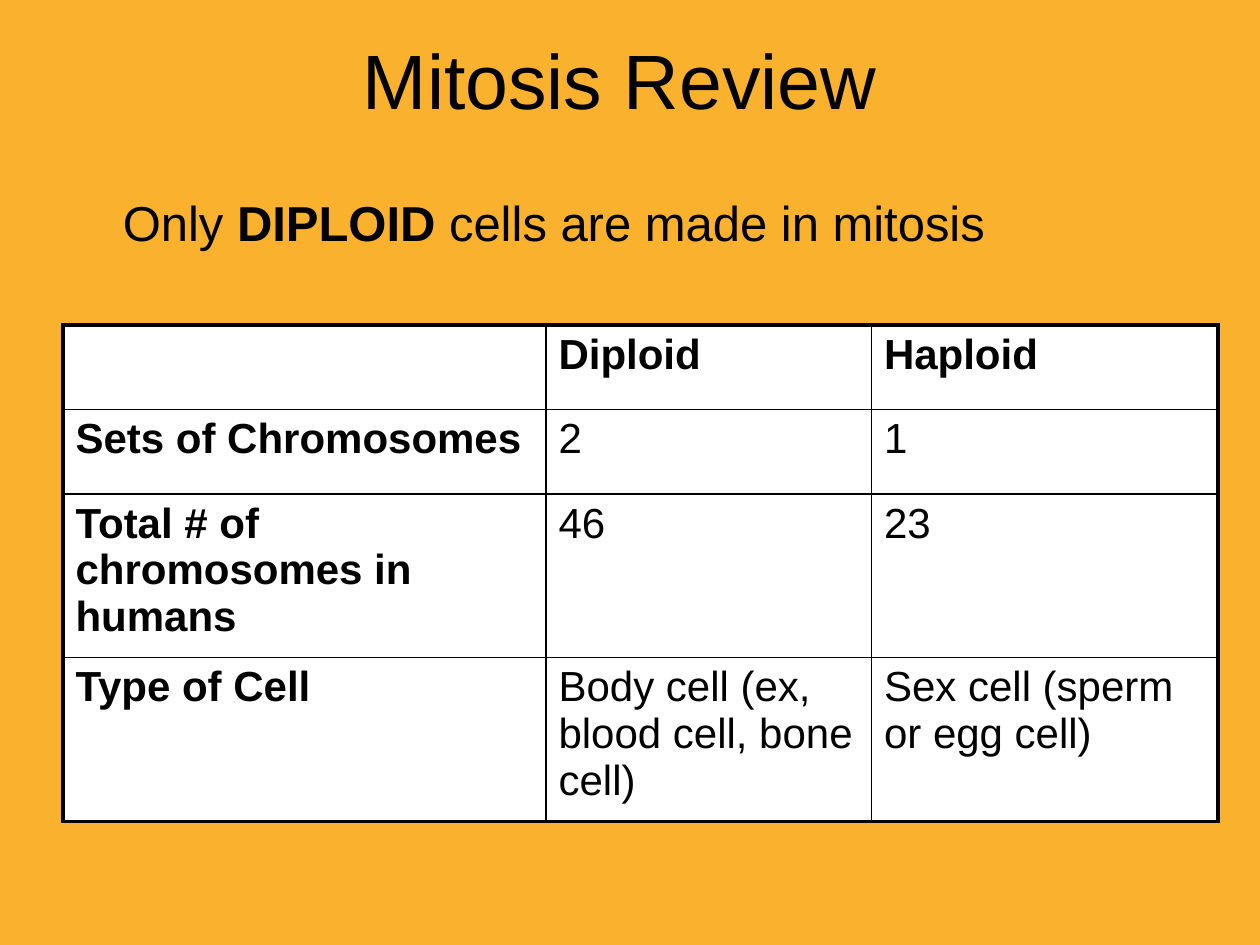
from dataclasses import dataclass

from lxml import etree
from pptx import Presentation
from pptx import util as u
from pptx.dml.color import RGBColor
from pptx.enum import text
from pptx.oxml import ns

INK, PAPER, BACKDROP = "000000", "FFFFFF", "FAB12E"
FONT = "Arial"
UNIT = 1 / 12
COLUMN_UNITS = (46, 31, 33)
ROW_INCHES = (0.67, 0.67, 1.3, 1.3)
OUTER_LINE, INNER_LINE = 2.25, 1


@dataclass(frozen=True)
class Trait:
    label: str
    diploid: str
    haploid: str

    def entries(self) -> tuple[str, str, str]:
        return self.label, self.diploid, self.haploid


TRAITS = (
    Trait("", "Diploid", "Haploid"),
    Trait("Sets of Chromosomes", "2", "1"),
    Trait("Total # of chromosomes in humans", "46", "23"),
    Trait("Type of Cell", "Body cell (ex, blood cell, bone cell)",
          "Sex cell (sperm or egg cell)"),
)


def paint(target, color: str) -> None:
    target.solid()
    target.fore_color.rgb = RGBColor.from_string(color)


def style(run, size: float, bold: bool = False) -> None:
    run.font.name = FONT
    run.font.size = u.Pt(size)
    run.font.bold = bold
    paint(run.font.fill, INK)


def place(shape, left: float, top: float, width: float, height: float) -> None:
    shape.left, shape.top = u.Inches(left), u.Inches(top)
    shape.width, shape.height = u.Inches(width), u.Inches(height)


def add_part(parent, tag: str, **attributes: str):
    return etree.SubElement(parent, ns.qn(tag), attributes)


def draw_border(cell, side: str, width: float) -> None:
    line = add_part(cell._tc.get_or_add_tcPr(), f"a:ln{side}", w=str(u.Pt(width)))
    add_part(add_part(line, "a:solidFill"), "a:srgbClr", val=INK)


def fill_cell(cell, entry: str, bold: bool, outer_sides: dict[str, bool]) -> None:
    for side, outer in outer_sides.items():
        draw_border(cell, side, OUTER_LINE if outer else INNER_LINE)
    paint(cell.fill, PAPER)
    if entry:
        cell.text_frame.text = entry
        line = cell.text_frame.paragraphs[0]
        spacing = add_part(line._p.get_or_add_pPr(), "a:spcBef")
        add_part(spacing, "a:spcPct", val="20000")
        style(line.runs[0], 24, bold)


def add_comparison(slide) -> None:
    width = sum(COLUMN_UNITS) * UNIT
    frame = slide.shapes.add_table(
        len(TRAITS), len(COLUMN_UNITS), u.Inches(0.5), u.Inches(2.58),
        u.Inches(width), u.Inches(sum(ROW_INCHES)))
    table = frame.table
    table.first_row = table.horz_banding = False
    for column, units in zip(table.columns, COLUMN_UNITS):
        column.width = u.Inches(units * UNIT)
    for row, height in zip(table.rows, ROW_INCHES):
        row.height = u.Inches(height)
    last_row, last_column = len(TRAITS) - 1, len(COLUMN_UNITS) - 1
    for r, trait in enumerate(TRAITS):
        for c, entry in enumerate(trait.entries()):
            outer_sides = {"L": c == 0, "R": c == last_column,
                           "T": r == 0, "B": r == last_row}
            fill_cell(table.cell(r, c), entry, r == 0 or c == 0, outer_sides)


def add_heading(title) -> None:
    place(title, 0.42, 0, 9, 1.25)
    title.text_frame.text = "Mitosis Review"
    title.text_frame.vertical_anchor = text.MSO_ANCHOR.MIDDLE
    heading = title.text_frame.paragraphs[0]
    heading.alignment = text.PP_ALIGN.CENTER
    style(heading.runs[0], 44)


def add_statement(body) -> None:
    place(body, 0.5, 1.42, 9, 4.95)
    statement = body.text_frame.paragraphs[0]
    add_part(statement._p.get_or_add_pPr(), "a:buNone")
    for words, size, bold in (("\t", 32, False), ("Only ", 28, False),
                              ("DIPLOID ", 28, True),
                              ("cells are made in mitosis", 28, False)):
        run = statement.add_run()
        run.text = words
        style(run, size, bold)


def main() -> None:
    """Build the mitosis review slide."""
    deck = Presentation()
    deck.slide_width, deck.slide_height = u.Inches(10), u.Inches(7.5)
    slide = deck.slides.add_slide(deck.slide_layouts[1])
    paint(slide.background.fill, BACKDROP)
    add_heading(slide.shapes.title)
    add_statement(slide.placeholders[1])
    add_comparison(slide)
    deck.save("out.pptx")


if __name__ == "__main__":
    main()
